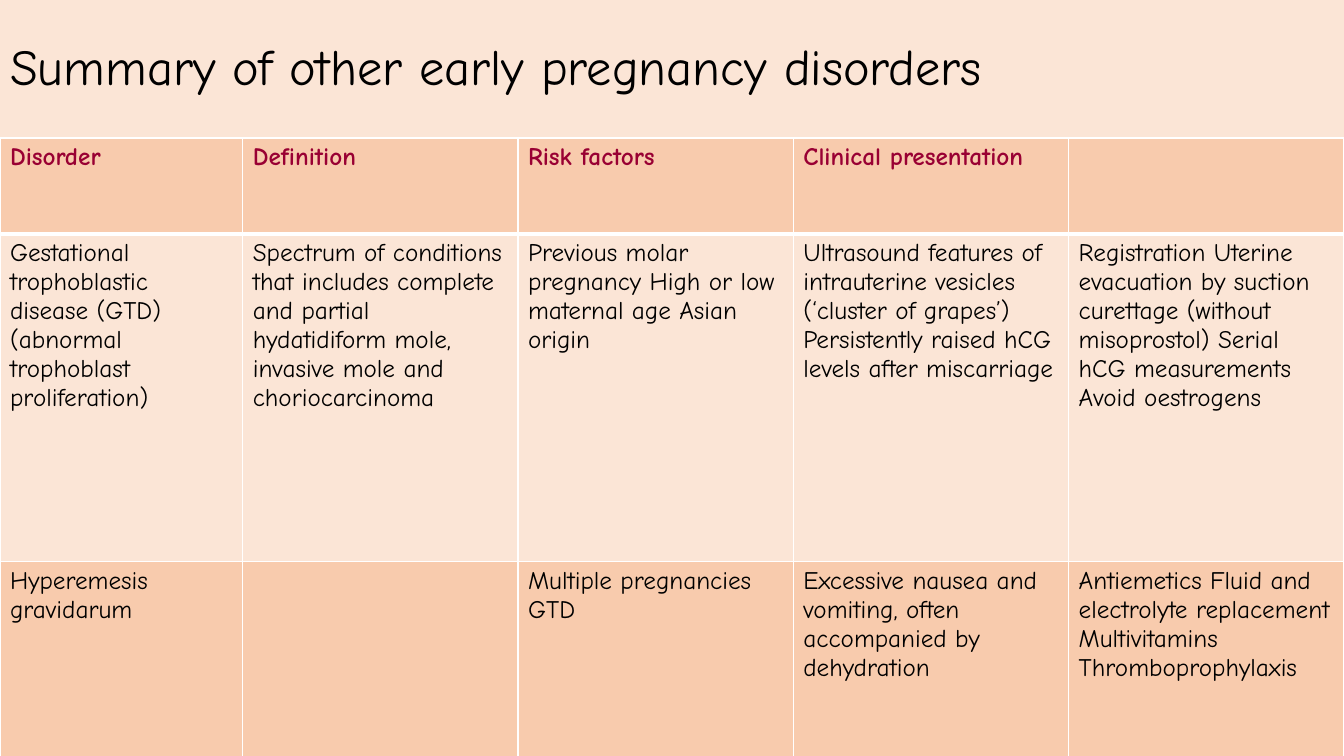
import pptx
import pptx.util
import pptx.dml.color
import pptx.enum.text
import pptx.oxml

Pt = pptx.util.Pt
Rgb = pptx.dml.color.RGBColor.from_string
Text = pptx.enum.text

theme = {
    "font": "Comic Neue",
    "title": 36,
    "body": 18,
    "ink": "000000",
    "head": "990033",
    "pale": "FBE5D6",
    "peach": "F8CBAD",
    "rule": "FFFFFF",
}

rows = [
    ["Disorder", "Definition", "Risk factors", "Clinical presentation", ""],
    [
        "Gestational trophoblastic disease (GTD) (abnormal trophoblast proliferation)",
        "Spectrum of conditions that includes complete and partial hydatidiform mole, invasive mole and choriocarcinoma",
        "Previous molar pregnancy High or low maternal age Asian origin",
        "Ultrasound features of intrauterine vesicles (‘cluster of grapes’) Persistently raised hCG levels after miscarriage",
        "Registration Uterine evacuation by suction curettage (without misoprostol) Serial hCG measurements Avoid oestrogens",
    ],
    [
        "Hyperemesis gravidarum",
        "",
        "Multiple pregnancies GTD",
        "Excessive nausea and vomiting, often accompanied by dehydration",
        "Antiemetics Fluid and electrolyte replacement Multivitamins Thromboprophylaxis",
    ],
]
wide, top = 960, 98.6
first = 173.4
widths = [first] + [(wide - first) / 4] * 4
heights = [68.4, 234, 157]


def style(para, size, color, bold=False):
    para.font.name = theme["font"]
    para.font.size = Pt(size)
    para.font.bold = bold
    para.font.color.rgb = Rgb(color)


def edge(cell, side, width):
    space = "http://schemas.openxmlformats.org/drawingml/2006/main"
    line = pptx.oxml.parse_xml(
        f'<a:ln{side} xmlns:a="{space}" w="{Pt(width)}"><a:solidFill>'
        f'<a:srgbClr val="{theme["rule"]}"/></a:solidFill></a:ln{side}>'
    )
    cell._tc.get_or_add_tcPr().append(line)


deck = pptx.Presentation()
deck.slide_width, deck.slide_height = Pt(wide), Pt(540)
slide = deck.slides.add_slide(deck.slide_layouts[5])

title = slide.shapes.title
title.left, title.top, title.width, title.height = Pt(0), Pt(0), Pt(wide), Pt(top)
title.fill.solid()
title.fill.fore_color.rgb = Rgb(theme["pale"])
frame = title.text_frame
frame.text = "Summary of other early pregnancy disorders"
frame.auto_size = Text.MSO_AUTO_SIZE.NONE
frame.vertical_anchor = Text.MSO_ANCHOR.MIDDLE
para = frame.paragraphs[0]
para.alignment = Text.PP_ALIGN.LEFT
para.line_spacing = 0.9
style(para, theme["title"], theme["ink"])

table = slide.shapes.add_table(
    len(rows), len(widths), Pt(0), Pt(top), Pt(wide), Pt(sum(heights))
).table
for col, width in zip(table.columns, widths):
    col.width = Pt(width)

for r, texts in enumerate(rows):
    table.rows[r].height = Pt(heights[r])
    for c, text in enumerate(texts):
        cell = table.cell(r, c)
        edge(cell, "L", 1)
        edge(cell, "R", 1)
        edge(cell, "T", 3 if r == 1 else 1)
        edge(cell, "B", 3 if r == 0 else 1)
        cell.fill.solid()
        cell.fill.fore_color.rgb = Rgb(theme["pale" if r == 1 else "peach"])
        cell.text = text
        color = theme["head" if r == 0 else "ink"]
        style(cell.text_frame.paragraphs[0], theme["body"], color, r == 0)

deck.save("out.pptx")
